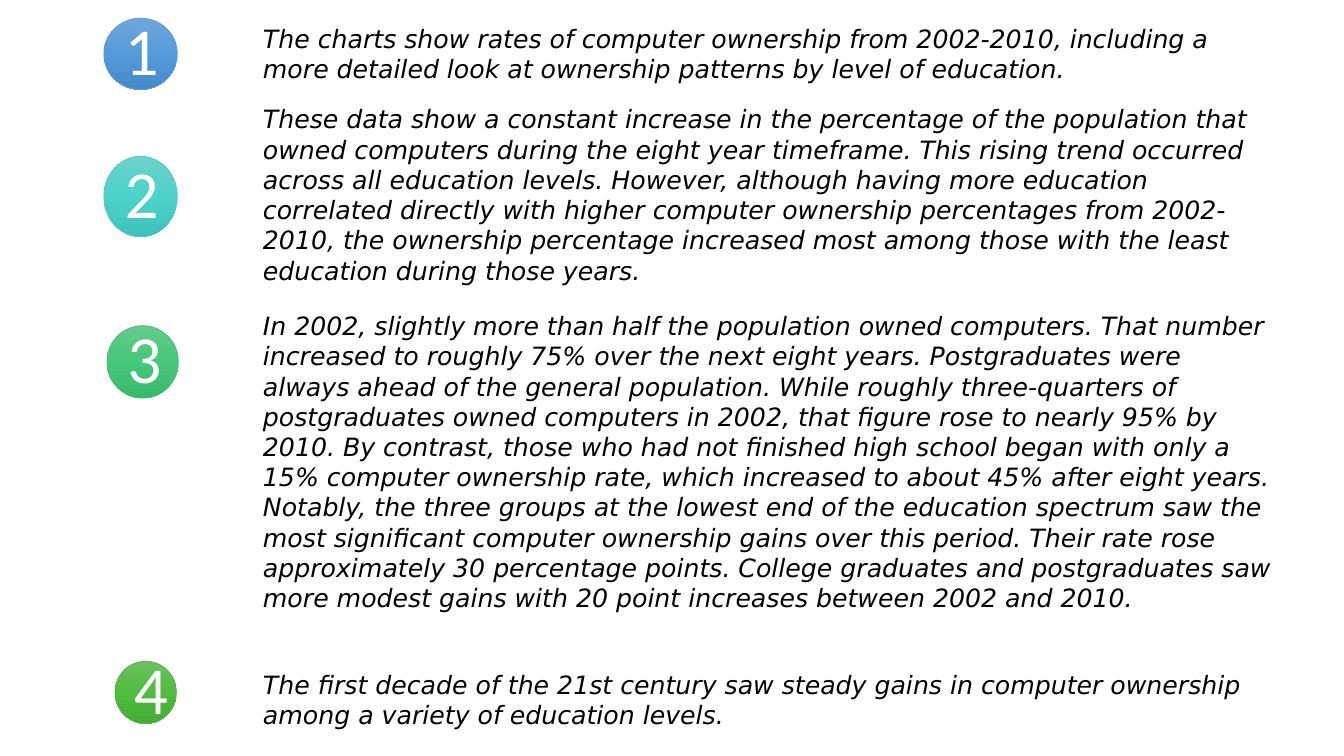
from copy import deepcopy

from pptx import Presentation
from pptx import util as u
from pptx.dml.color import RGBColor
from pptx.enum import shapes, text

BLACK = RGBColor(0x00, 0x00, 0x00)
WHITE = RGBColor(0xFF, 0xFF, 0xFF)
BLUE = RGBColor(0x5B, 0x9B, 0xD5)
BLUE_SHADES = (RGBColor(0x71, 0xA6, 0xDB), RGBColor(0x55, 0x9B, 0xDB), RGBColor(0x44, 0x8A, 0xCA))
TEAL = RGBColor(0x53, 0xCC, 0xC5)
TEAL_SHADES = (RGBColor(0x6B, 0xD2, 0xCC), RGBColor(0x4D, 0xD2, 0xCA), RGBColor(0x3E, 0xC2, 0xBA))
JADE = RGBColor(0x4C, 0xC2, 0x7B)
JADE_SHADES = (RGBColor(0x66, 0xC9, 0x8A), RGBColor(0x46, 0xC8, 0x7A), RGBColor(0x38, 0xB8, 0x6B))
GREEN = RGBColor(0x55, 0xB6, 0x46)
GREEN_SHADES = (RGBColor(0x6C, 0xBF, 0x61), RGBColor(0x51, 0xBC, 0x40), RGBColor(0x44, 0xAC, 0x34))

TEXT_COLUMN = 25.1

# Each step: text (row, width, height), badge (column, row, width, height),
# outline, gradient shades, paragraphs
STEPS = [
    ((1.8, 100.3, 7.1), (10.3, 1.8, 7.3, 7.1), BLUE, BLUE_SHADES, [
        "The charts show rates of computer ownership from 2002-2010, including a "
        "more detailed look at ownership patterns by level of education."]),
    ((9.8, 102.3, 19.2), (10.3, 15.5, 7.3, 8), TEAL, TEAL_SHADES, [
        "These data show a constant increase in the percentage of the population that "
        "owned computers during the eight year timeframe. This rising trend occurred "
        "across all education levels. However, although having more education "
        "correlated directly with higher computer ownership percentages from 2002-2010, "
        "the ownership percentage increased most among those with the least "
        "education during those years."]),
    ((30.3, 102.3, 34.3), (10.6, 32.3, 7.1, 7.2), JADE, JADE_SHADES, [
        "In 2002, slightly more than half the population owned computers. That number "
        "increased to roughly 75% over the next eight years. Postgraduates were "
        "always ahead of the general population. While roughly three-quarters of "
        "postgraduates owned computers in 2002, that figure rose to nearly 95% by "
        "2010. By contrast, those who had not finished high school began with only a "
        "15% computer ownership rate, which increased to about 45% after eight years.",
        "Notably, the three groups at the lowest end of the education spectrum saw the "
        "most significant computer ownership gains over this period. Their rate rose "
        "approximately 30 percentage points. College graduates and postgraduates saw "
        "more modest gains with 20 point increases between 2002 and 2010."]),
    ((65.9, 105.1, 7.1), (11.4, 65.6, 6.1, 6.2), GREEN, GREEN_SHADES, [
        "The first decade of the 21st century saw steady gains in computer ownership "
        "among a variety of education levels."]),
]


class StepSlide:
    """Places elements on a grid whose columns and rows are a tenth of an inch."""

    CELL = u.Inches(0.1)
    TEXT_FONT, TEXT_SIZE = "DejaVu Sans", u.Pt(18)
    DIGIT_FONT, DIGIT_SIZE = "Calibri", u.Pt(48)
    DIGIT_SHARE = 0.705

    def __init__(self, presentation):
        self.slide = presentation.slides.add_slide(presentation.slide_layouts[6])

    def grid(self, *cells):
        return [round(cell * self.CELL) for cell in cells]

    def style(self, paragraph, font_name, size, color, italic=False):
        for run in paragraph.runs:
            run.font.name, run.font.size = font_name, size
            run.font.color.rgb, run.font.italic = color, italic

    def body(self, column, row, width, height, paragraphs):
        box = self.slide.shapes.add_textbox(*self.grid(column, row, width, height))
        frame = box.text_frame
        frame.word_wrap = True
        frame.auto_size = text.MSO_AUTO_SIZE.SHAPE_TO_FIT_TEXT
        frame.text = "\n".join(paragraphs)
        for paragraph in frame.paragraphs:
            self.style(paragraph, self.TEXT_FONT, self.TEXT_SIZE, BLACK, italic=True)

    def shade(self, shape, shades):
        """Fill from top to bottom with evenly spaced shades."""
        shape.fill.gradient()
        shape.fill.gradient_angle = 270
        stop_list = shape.element.xpath(".//a:gsLst")[0]
        stop_list.append(deepcopy(stop_list[-1]))
        for index, (stop, color) in enumerate(zip(shape.fill.gradient_stops, shades)):
            stop.color.rgb = color
            stop.position = index / (len(shades) - 1)

    def badge(self, column, row, width, height, digit, outline, shades):
        group = self.slide.shapes.add_group_shape()
        circle = group.shapes.add_shape(
            shapes.MSO_SHAPE.OVAL, *self.grid(column, row, width, height))
        circle.shadow.inherit = False
        self.shade(circle, shades)
        circle.line.color.rgb, circle.line.width = outline, u.Pt(0.5)

        margin = (1 - self.DIGIT_SHARE) / 2
        box = group.shapes.add_textbox(*self.grid(
            column + margin * width, row + margin * height,
            self.DIGIT_SHARE * width, self.DIGIT_SHARE * height))
        frame = box.text_frame
        frame.word_wrap = True
        frame.vertical_anchor = text.MSO_ANCHOR.MIDDLE
        frame.margin_top = frame.margin_bottom = u.Inches(0.01)
        frame.text = digit
        paragraph = frame.paragraphs[0]
        paragraph.alignment = text.PP_ALIGN.CENTER
        paragraph.line_spacing = 0.9
        self.style(paragraph, self.DIGIT_FONT, self.DIGIT_SIZE, WHITE)


def main():
    presentation = Presentation()
    presentation.slide_width = u.Inches(13.33)
    presentation.slide_height = u.Inches(7.5)
    slide = StepSlide(presentation)
    for number, (body, badge, outline, shades, paragraphs) in enumerate(STEPS, 1):
        slide.body(TEXT_COLUMN, *body, paragraphs)
        slide.badge(*badge, str(number), outline, shades)
    presentation.save("out.pptx")


if __name__ == "__main__":
    main()
